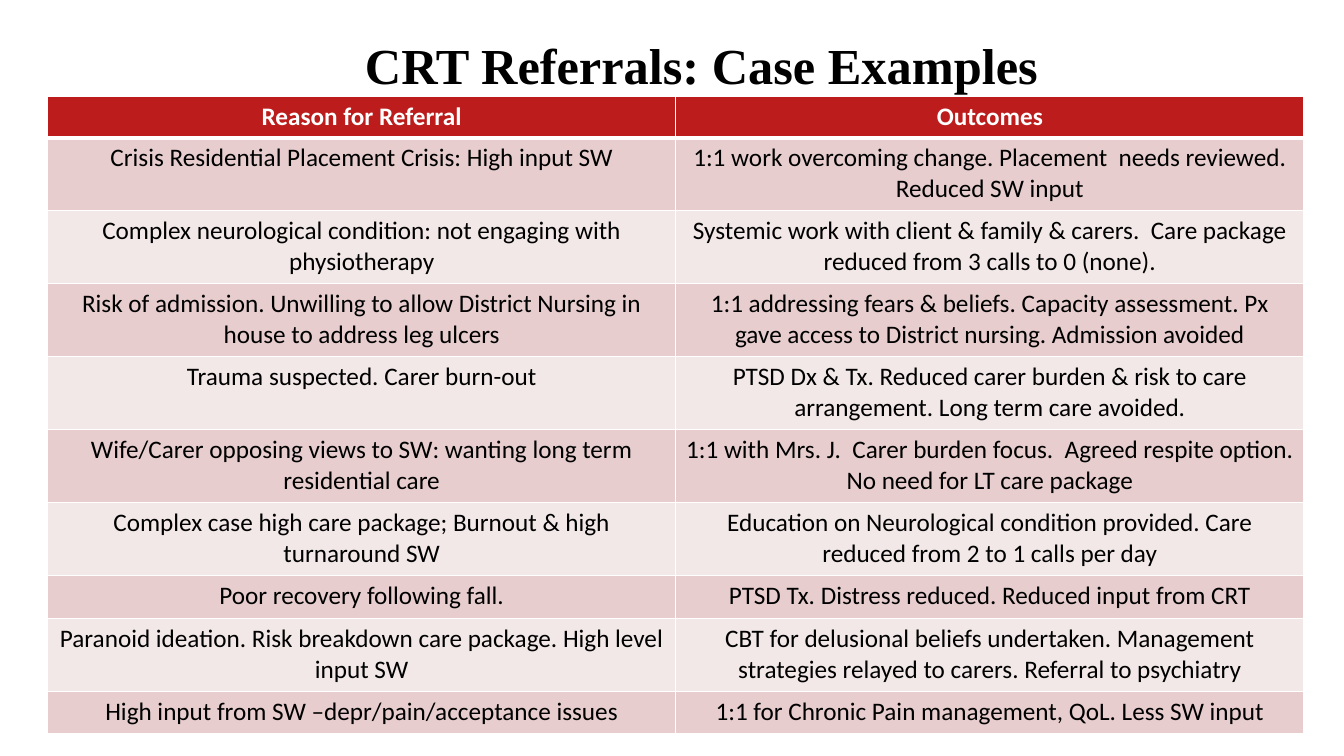
"""Build the slide of CRT referral case examples."""
from lxml import etree
from pptx import Presentation, util as u
from pptx.dml.color import RGBColor
from pptx.enum import text
from pptx.oxml.ns import qn

CASES = [
    ("Reason for Referral", "Outcomes", 1.03),
    ("Crisis Residential Placement Crisis: High input SW",
     "1:1 work overcoming change. Placement  needs reviewed. Reduced SW input", 1.84),
    ("Complex neurological condition: not engaging with physiotherapy",
     "Systemic work with client & family & carers.  Care package reduced from 3 calls to 0 (none).", 1.84),
    ("Risk of admission. Unwilling to allow District Nursing in house to address leg ulcers",
     "1:1 addressing fears & beliefs. Capacity assessment. Px gave access to District nursing. Admission avoided",
     1.84),
    ("Trauma suspected. Carer burn-out",
     "PTSD Dx & Tx. Reduced carer burden & risk to care arrangement. Long term care avoided.", 1.84),
    ("Wife/Carer opposing views to SW: wanting long term residential care",
     "1:1 with Mrs. J.  Carer burden focus.  Agreed respite option. No need for LT care package", 1.84),
    ("Complex case high care package; Burnout & high turnaround SW",
     "Education on Neurological condition provided. Care reduced from 2 to 1 calls per day", 1.84),
    ("Poor recovery following fall.",
     "PTSD Tx. Distress reduced. Reduced input from CRT", 1.07),
    ("Paranoid ideation. Risk breakdown care package. High level input SW",
     "CBT for delusional beliefs undertaken. Management strategies relayed to carers. Referral to psychiatry", 1.84),
    ("High input from SW –depr/pain/acceptance issues",
     "1:1 for Chronic Pain management, QoL. Less SW input", 1.07),
]


def rgb(value):
    return RGBColor.from_string(value)


def write(tf, words, size=18, font="Calibri", color="000000", bold=False):
    p = tf.paragraphs[0]
    p.alignment = text.PP_ALIGN.CENTER
    r = p.add_run()
    r.text = words
    r.font.size = u.Pt(size)
    r.font.name = font
    r.font.bold = bold
    r.font.color.rgb = rgb(color)


prs = Presentation()
prs.slide_width, prs.slide_height = u.Cm(33.87), u.Cm(19.05)
s = prs.slides.add_slide(prs.slide_layouts[6])
s.background.fill.solid()
s.background.fill.fore_color.rgb = rgb("FFFFFF")

title = s.shapes.add_textbox(u.Cm(1.5), u.Cm(0.79), u.Cm(32.36), u.Cm(1.65))
tf = title.text_frame
tf.word_wrap = True
tf.vertical_anchor = text.MSO_ANCHOR.MIDDLE
write(tf, "CRT Referrals: Case Examples", size=36, font="Times New Roman", bold=True)

table = s.shapes.add_table(len(CASES), 2, u.Cm(1.2), u.Cm(2.44), u.Cm(31.66), u.Cm(16.05)).table
for col in table.columns:
    col.width = u.Cm(15.83)

for i, (reason, outcome, height) in enumerate(CASES):
    table.rows[i].height = u.Cm(height)
    header = i == 0
    fill = "BC1C1C" if header else "E7CDCD" if i % 2 else "F3E8E8"
    for j, words in enumerate((reason, outcome)):
        cell = table.cell(i, j)
        tcPr = cell._tc.get_or_add_tcPr()
        for side in "LRTB":
            thick = (i, side) in ((0, "B"), (1, "T"))
            ln = etree.SubElement(tcPr, qn(f"a:ln{side}"), w=str(u.Pt(3 if thick else 1)))
            solid = etree.SubElement(ln, qn("a:solidFill"))
            etree.SubElement(solid, qn("a:srgbClr"), val="FFFFFF")
        cell.fill.solid()
        cell.fill.fore_color.rgb = rgb(fill)
        write(cell.text_frame, words, color="FFFFFF" if header else "000000", bold=header)

prs.save("out.pptx")
